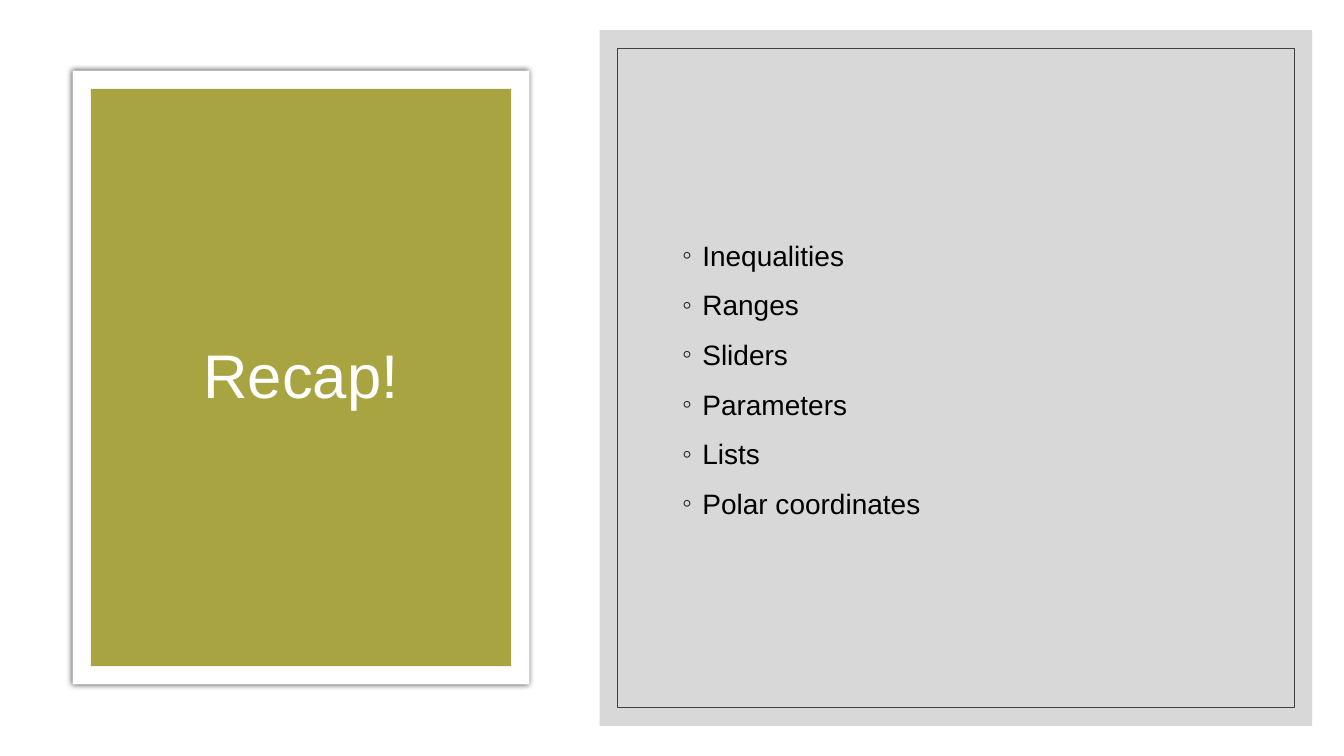
from lxml import etree
from pptx import Presentation
from pptx.dml.color import RGBColor
from pptx.enum.shapes import MSO_SHAPE as Shape
from pptx.enum.text import MSO_ANCHOR as Anchor, PP_ALIGN as Align
from pptx.oxml import parse_xml
from pptx.oxml.ns import nsdecls, qn
from pptx.util import Cm, Pt

WHITE = RGBColor(0xFF, 0xFF, 0xFF)
BLACK = RGBColor(0x00, 0x00, 0x00)
OLIVE = RGBColor(0xA7, 0xA4, 0x41)
GREY = RGBColor(0xBF, 0xBF, 0xBF)
DARK_GREY = RGBColor(0x40, 0x40, 0x40)
MARGIN = 0.46  # gap in cm between a card and its inner frame

TOPICS = ["Inequalities", "Ranges", "Sliders", "Parameters", "Lists", "Polar coordinates"]

prs = Presentation()
prs.slide_width, prs.slide_height = Cm(33.87), Cm(19.05)
slide = prs.slides.add_slide(prs.slide_layouts[5])


def add_panel(left, top, width, height, fill=None, line=None):
    panel = slide.shapes.add_shape(
        Shape.RECTANGLE, Cm(left), Cm(top), Cm(width), Cm(height))
    panel.shadow.inherit = False
    if fill is None:
        panel.fill.background()
    else:
        panel.fill.solid()
        panel.fill.fore_color.rgb = fill
    if line is None:
        panel.line.fill.background()
    else:
        panel.line.color.rgb = line
        panel.line.width = Pt(0.5)
    return panel


def write(paragraph, text, size, color, align=Align.LEFT, line_spacing=1.0, space_before=0):
    paragraph.text = text
    paragraph.alignment = align
    paragraph.line_spacing = line_spacing
    paragraph.space_before = Pt(space_before)
    font = paragraph.runs[0].font
    font.name, font.size, font.color.rgb = "Arial", Pt(size), color


add_panel(0, 0, 33.87, 19.05, fill=WHITE)

# Title card
title_card = add_panel(1.83, 1.78, 11.51, 15.47, fill=WHITE)
title_card._element.spPr.find(qn("a:effectLst")).append(parse_xml(
    f'<a:outerShdw {nsdecls("a")} blurRad="50800" dist="0" dir="0" algn="ctr" rotWithShape="0">'
    '<a:srgbClr val="000000"><a:alpha val="66000"/></a:srgbClr></a:outerShdw>'))
add_panel(1.83 + MARGIN, 1.78 + MARGIN, 11.51 - 2 * MARGIN, 15.47 - 2 * MARGIN, fill=OLIVE)

title = slide.shapes.title
title.left, title.top, title.width, title.height = Cm(2.74), Cm(3.3), Cm(9.7), Cm(12.47)
title.text_frame.vertical_anchor = Anchor.MIDDLE
title.text_frame.word_wrap = True
write(title.text_frame.paragraphs[0], "Recap!", 44, WHITE, align=Align.CENTER, line_spacing=0.9)
slide.shapes._spTree.append(title._element)  # bring the title in front of its card

# Topic card
topic_card = add_panel(15.11, 0.76, 17.96, 17.53, fill=GREY)
card_color = topic_card._element.spPr.find(qn("a:solidFill")).find(qn("a:srgbClr"))
etree.SubElement(card_color, qn("a:alpha"), val="60000")
add_panel(15.11 + MARGIN, 0.76 + MARGIN, 17.96 - 2 * MARGIN, 17.53 - 2 * MARGIN, line=DARK_GREY)

topic_list = slide.shapes.add_textbox(Cm(16.94), Cm(2.59), Cm(14.38), Cm(13.84)).text_frame
topic_list.word_wrap = True
topic_list.vertical_anchor = Anchor.MIDDLE
for index, topic in enumerate(TOPICS):
    item = topic_list.add_paragraph() if index else topic_list.paragraphs[0]
    write(item, topic, 20, BLACK, line_spacing=1.1, space_before=9 if index else 0)
    properties = item._p.get_or_add_pPr()
    properties.set("marL", str(Cm(0.51)))
    properties.set("indent", str(-Cm(0.51)))
    bullet_color = etree.SubElement(properties, qn("a:buClr"))
    etree.SubElement(bullet_color, qn("a:srgbClr"), val="262626")
    etree.SubElement(properties, qn("a:buFont"), typeface="Arial")
    etree.SubElement(properties, qn("a:buChar"), char="◦")

prs.save("out.pptx")
